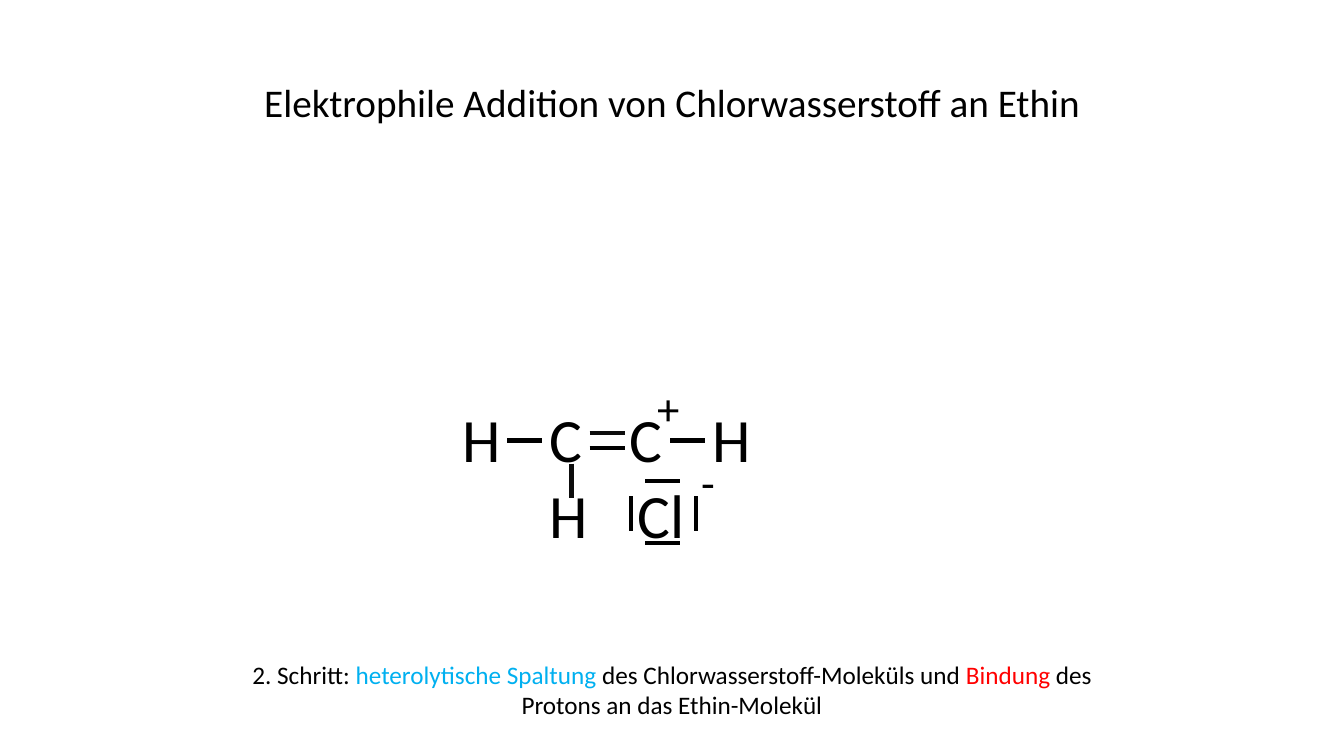
from dataclasses import dataclass

from lxml.etree import SubElement
from pptx import Presentation
from pptx.dml.color import RGBColor
from pptx.enum.shapes import MSO_CONNECTOR
from pptx.enum.text import MSO_ANCHOR, MSO_AUTO_SIZE, PP_ALIGN
from pptx.oxml.ns import qn
from pptx.slide import Slide
from pptx.text.text import TextFrame
from pptx.util import Cm, Pt


@dataclass(frozen=True)
class Theme:
    font: str = "Calibri"
    black: str = "000000"
    dark: str = "0D0D0D"
    blue: str = "00B0F0"
    red: str = "FF0000"
    title: int = 28
    caption: int = 18
    atom: int = 44
    charge: int = 32
    bond: int = 3


@dataclass(frozen=True)
class Label:
    text: str
    left: float
    top: float
    width: float
    height: float
    size: int


@dataclass(frozen=True)
class Bond:
    x: float
    y: float
    vertical: bool = False
    color: str = "000000"


THEME = Theme()
BOND_LENGTH = 0.88
TEXT_LEFT, TEXT_WIDTH = 5.49, 22.89
CHAIN_Y, LOWER_Y = 9.98, 11.89
ATOM_W, ATOM_H = 1.47, 2.13
CHARGE_W, CHARGE_H = 2.39, 1.63

LABELS = [
    *(Label(text, x, y, ATOM_W, ATOM_H, THEME.atom) for text, x, y in (
        ("H", 11.4, CHAIN_Y), ("C", 13.59, CHAIN_Y), ("C", 15.62, CHAIN_Y),
        ("H", 17.7, CHAIN_Y), ("H", 13.61, LOWER_Y))),
    Label("Cl", 15.82, LOWER_Y, 1.96, ATOM_H, THEME.atom),
    Label("+", 16.31, 9.47, CHARGE_W, CHARGE_H, THEME.charge),
    Label("-", 17.42, 11.33, CHARGE_W, CHARGE_H, THEME.charge),
]

MOLECULE_BONDS = [
    Bond(12.78, 11.1),
    Bond(14.86, 10.92, color=THEME.dark),
    Bond(14.86, 11.28),
    Bond(16.89, 11.1),
    Bond(14.4, 11.68, vertical=True, color=THEME.dark),
]
LONE_PAIRS = [
    *(Bond(16.26, y) for y in (12.12, 13.69)),
    *(Bond(x, 12.5, vertical=True) for x in (15.9, 17.53)),
]

CAPTION = [
    ("2. Schritt: ", THEME.black),
    ("heterolytische Spaltung ", THEME.blue),
    ("des Chlorwasserstoff-Moleküls und ", THEME.black),
    ("Bindung", THEME.red),
    (" des Protons an das Ethin-Molekül", THEME.black),
]


def write(tf: TextFrame, text: str, *, size: int, color: str = THEME.black,
          align: PP_ALIGN = PP_ALIGN.LEFT) -> None:
    tf.word_wrap = True
    tf.auto_size = MSO_AUTO_SIZE.NONE
    tf.vertical_anchor = MSO_ANCHOR.TOP
    p = tf.paragraphs[0]
    p.alignment = align
    r = p.add_run()
    r.text = text
    r.font.name = THEME.font
    r.font.size = Pt(size)
    r.font.color.rgb = RGBColor.from_string(color)


def add_title(slide: Slide, text: str) -> None:
    sp = slide.shapes.title
    sp.left, sp.top = Cm(TEXT_LEFT), Cm(1.85)
    sp.width, sp.height = Cm(TEXT_WIDTH), Cm(1.45)
    write(sp.text_frame, text, size=THEME.title, align=PP_ALIGN.CENTER)


def add_label(slide: Slide, label: Label) -> None:
    sp = slide.shapes.add_textbox(Cm(label.left), Cm(label.top),
                                  Cm(label.width), Cm(label.height))
    write(sp.text_frame, label.text, size=label.size)


def add_bond(slide: Slide, bond: Bond) -> None:
    dx, dy = (0, BOND_LENGTH) if bond.vertical else (BOND_LENGTH, 0)
    line = slide.shapes.add_connector(MSO_CONNECTOR.STRAIGHT, Cm(bond.x), Cm(bond.y),
                                      Cm(bond.x + dx), Cm(bond.y + dy))
    line.line.width = Pt(THEME.bond)
    line.line.color.rgb = RGBColor.from_string(bond.color)
    SubElement(line._element.spPr, qn("a:effectLst"))


def add_caption(slide: Slide) -> None:
    sp = slide.shapes.add_textbox(Cm(TEXT_LEFT), Cm(16.48), Cm(TEXT_WIDTH), Cm(1.8))
    for text, color in CAPTION:
        write(sp.text_frame, text, size=THEME.caption, color=color, align=PP_ALIGN.CENTER)


def main() -> None:
    prs = Presentation()
    prs.slide_width, prs.slide_height = Cm(33.87), Cm(19.05)
    slide = prs.slides.add_slide(prs.slide_layouts.get_by_name("Title Only"))
    add_title(slide, "Elektrophile Addition von Chlorwasserstoff an Ethin")
    for label in LABELS:
        add_label(slide, label)
    for bond in MOLECULE_BONDS + LONE_PAIRS:
        add_bond(slide, bond)
    add_caption(slide)
    prs.save("out.pptx")


if __name__ == "__main__":
    main()
